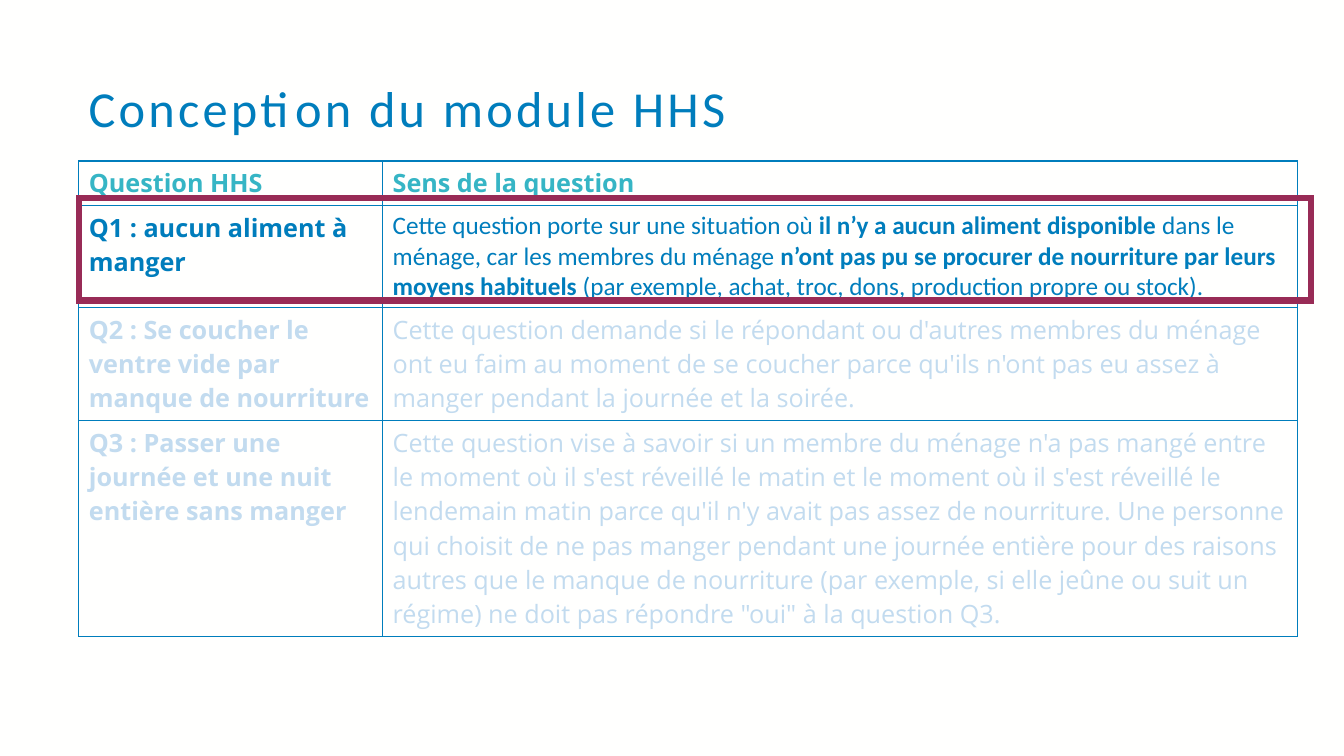
from lxml.etree import SubElement
from pptx import Presentation
from pptx.dml.color import RGBColor
from pptx.enum.shapes import MSO_SHAPE
from pptx.enum.text import MSO_ANCHOR
from pptx.oxml.ns import qn
from pptx.util import Pt

BLUE, TEAL, PALE, WINE, PAPER = "007DBC", "36B5C5", "C2DBEF", "982B56", "FFFFFE"
SANS, BODY = "Open Sans", "Calibri"

TITLE = "Conception du module HHS"
# Each row: height, colour, font of the right cell, left text, right runs (text, bold)
ROWS = [
    (31.7, TEAL, SANS, "Question HHS", [("Sens de la question", True)]),
    (72.9, BLUE, BODY, "Q1 : aucun aliment à manger", [
        ("Cette question porte sur une situation où ", False),
        ("il n’y a aucun aliment disponible", True),
        (" dans le ménage, car les membres du ménage ", False),
        ("n’ont pas pu se procurer de nourriture par leurs moyens habituels", True),
        (" (par exemple, achat, troc, dons, production propre ou stock).", False),
    ]),
    (80.8, PALE, SANS, "Q2 : Se coucher le ventre vide par manque de nourriture", [
        ("Cette question demande si le répondant ou d'autres membres du ménage "
         "ont eu faim au moment de se coucher parce qu'ils n'ont pas eu assez à "
         "manger pendant la journée et la soirée.", False),
    ]),
    (154.3, PALE, SANS, "Q3 : Passer une journée et une nuit entière sans manger", [
        ("Cette question vise à savoir si un membre du ménage n'a pas mangé entre "
         "le moment où il s'est réveillé le matin et le moment où il s'est réveillé "
         "le lendemain matin parce qu'il n'y avait pas assez de nourriture. Une "
         "personne qui choisit de ne pas manger pendant une journée entière pour des "
         "raisons autres que le manque de nourriture (par exemple, si elle jeûne ou "
         "suit un régime) ne doit pas répondre \"oui\" à la question Q3.", False),
    ]),
]

LEFT, TOP = 56.3, 115
COLS = [217, 653.4]
WIDTH = sum(COLS)
HEIGHT = sum(row[0] for row in ROWS)


def paint(target, color):
    """Give a fill one solid colour."""
    target.solid()
    target.fore_color.rgb = RGBColor.from_string(color)


def style(font, name, size, color):
    font.name, font.size = name, Pt(size)
    paint(font.fill, color)


def edge(cell, color, width):
    """Draw the four borders of a cell, ahead of its fill."""
    props = cell._tc.get_or_add_tcPr()
    for side in ("a:lnL", "a:lnR", "a:lnT", "a:lnB"):
        line = SubElement(props, qn(side), w=str(Pt(width)))
        fill = SubElement(line, qn("a:solidFill"))
        SubElement(fill, qn("a:srgbClr"), val=color)


def write(cell, runs, name, color):
    edge(cell, BLUE, 1)
    cell.fill.background()
    para = cell.text_frame.paragraphs[0]
    style(para.font, name, 18, color)
    for text, bold in runs:
        run = para.add_run()
        run.text = text
        run.font.bold = bold
        style(run.font, name, 18, color)


def add_title(slide):
    box = slide.shapes.add_textbox(Pt(LEFT), Pt(53.3), Pt(WIDTH), Pt(51.8))
    frame = box.text_frame
    frame.word_wrap = True
    frame.vertical_anchor = MSO_ANCHOR.MIDDLE
    para = frame.paragraphs[0]
    para.line_spacing = 0.9
    run = para.add_run()
    run.text = TITLE
    style(para.font, BODY, 36, BLUE)
    style(run.font, BODY, 36, BLUE)
    run.font._element.set("spc", "230")


def add_grid(slide):
    table = slide.shapes.add_table(
        len(ROWS), len(COLS), Pt(LEFT), Pt(TOP), Pt(WIDTH), Pt(HEIGHT)
    ).table
    table.first_row = table.horz_banding = False
    for col, width in zip(table.columns, COLS):
        col.width = Pt(width)
    for i, (height, color, name, label, runs) in enumerate(ROWS):
        table.rows[i].height = Pt(height)
        write(table.cell(i, 0), [(label, True)], SANS, color)
        write(table.cell(i, 1), runs, name, color)


def add_frame(slide):
    """Outline the Q1 row with square corners."""
    box = slide.shapes.add_shape(
        MSO_SHAPE.RECTANGLE, Pt(LEFT), Pt(141.4), Pt(880), Pt(73.4))
    box.shadow.inherit = False
    box.fill.background()
    paint(box.line.fill, WINE)
    box.line.width = Pt(4.5)
    SubElement(box.line._ln, qn("a:miter"), lim="800000")


def main():
    deck = Presentation()
    deck.slide_width, deck.slide_height = Pt(960), Pt(540)
    slide = deck.slides.add_slide(deck.slide_layouts[6])
    paint(slide.background.fill, PAPER)
    add_title(slide)
    add_grid(slide)
    add_frame(slide)
    deck.save("out.pptx")


if __name__ == "__main__":
    main()
